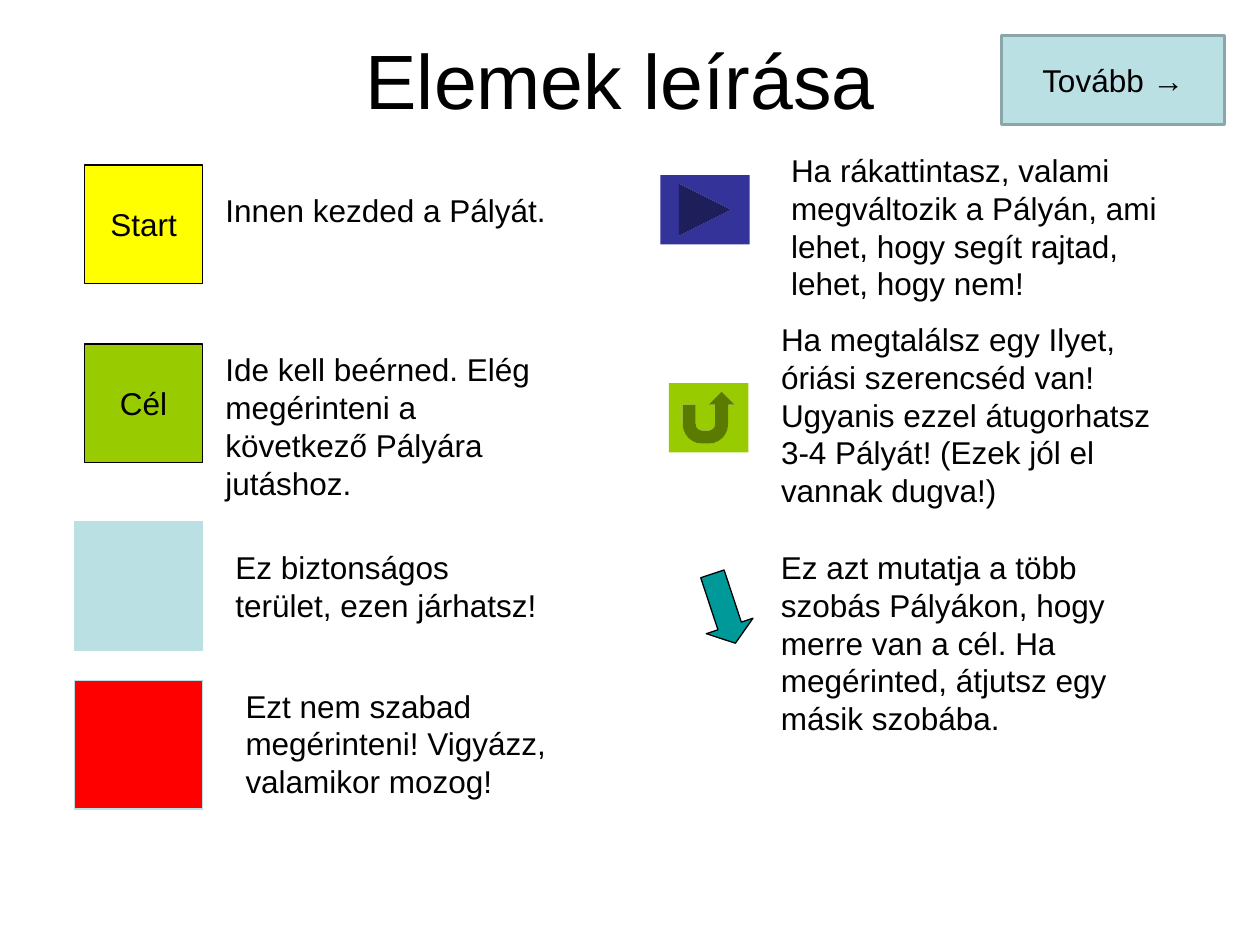
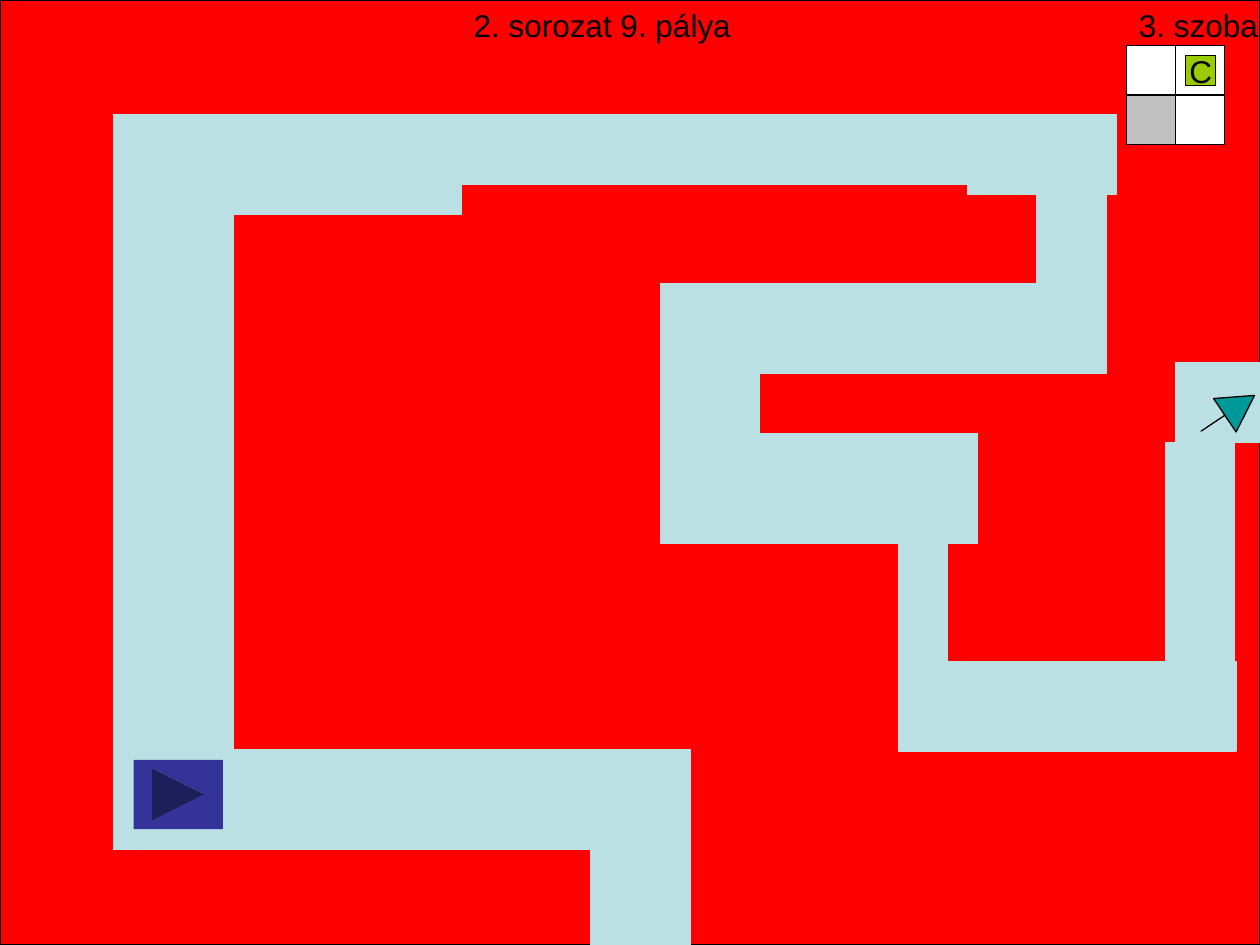
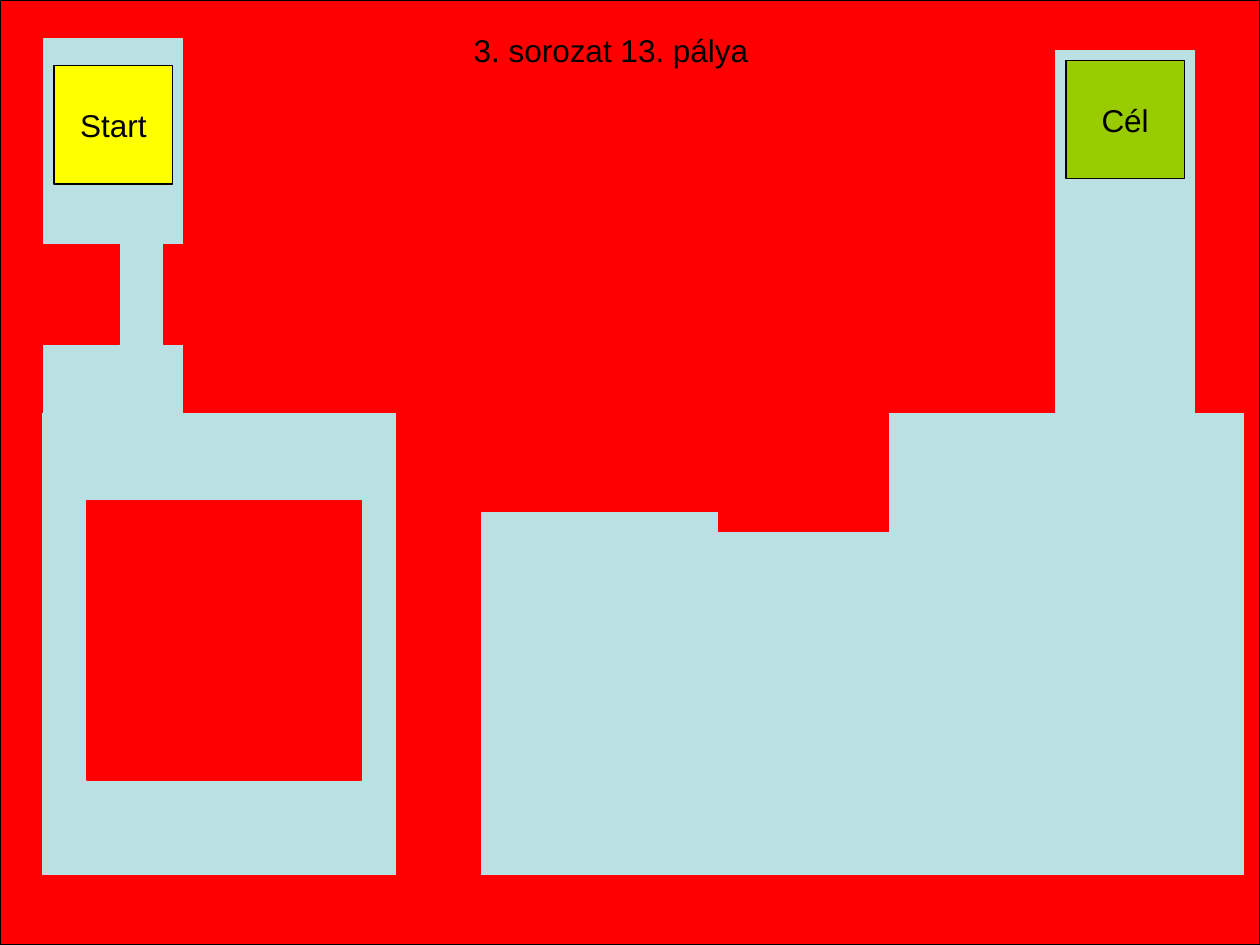
from pptx import Presentation
from pptx import util as u
from pptx.dml.color import RGBColor
from pptx.enum import shapes, text

SHAPE = shapes.MSO_SHAPE
W, H = 10, 7.5

# Theme: colours, type sizes and line widths
THEME = dict(
    font="Arial", title=44, body=18, thin=0.75, thick=2,
    black="000000", white="FFFFFF", grey="C0C0C0", yellow="FFFF00",
    green="99CC00", path_blue="BBE0E3", edge="8AA6A8", red="FF0000",
    navy="333399", teal="009999",
)
TILE = 0.94      # start and goal tiles
SAMPLE = 1.02    # safe and forbidden samples
CELL = 0.39      # one room on the room map
MAP_AT = (8.94, 0.36)
BUTTON = (0.71, 0.55)

# Content: slide 1
TITLE = "Elemek leírása "
NEXT = ("Tovább →", (7.95, 0.28, 1.77, 0.71))
SAMPLES = [(4.14, "path_blue"), (5.4, "red")]
DESCRIPTIONS = [  # left, top, width, height, wording
    (1.69, 1.47, 2.76, 0.4, "Innen kezded a Pályát."),
    (1.69, 2.73, 2.68, 1.3,
     "Ide kell beérned. Elég megérinteni a következő Pályára jutáshoz."),
    (1.77, 4.3, 2.68, 0.7, "Ez biztonságos terület, ezen járhatsz!"),
    (1.85, 5.4, 2.68, 1, "Ezt nem szabad megérinteni! Vigyázz, valamikor mozog!"),
    (6.18, 1.15, 3.23, 1.3,
     "Ha rákattintasz, valami megváltozik a Pályán, ami lehet, hogy segít "
     "rajtad, lehet, hogy nem!"),
    (6.1, 2.49, 3.31, 1.6,
     "Ha megtalálsz egy Ilyet, óriási szerencséd van! Ugyanis ezzel "
     "átugorhatsz 3-4 Pályát! (Ezek jól el vannak dugva!)"),
    (6.1, 4.3, 3.23, 1.6,
     "Ez azt mutatja a több szobás Pályákon, hogy merre van a cél. Ha "
     "megérinted, átjutsz egy másik szobába."),
]

# Content: slide 2
ROOMS = [("white", "white"), ("grey", "white")]
CORRIDORS = [
    (4.69, 5.95, 0.79, 1.55), (0.9, 5.95, 4.57, 0.79), (0.9, 1.86, 0.95, 4.88),
    (0.9, 0.91, 0.95, 1.18), (0.9, 0.91, 2.76, 0.79), (2.48, 0.91, 5.2, 0.55),
    (7.68, 0.91, 1.18, 0.63), (8.23, 0.91, 0.55, 2.05), (5.24, 2.25, 3.47, 0.71),
    (5.24, 2.33, 0.79, 1.89), (5.24, 3.44, 2.52, 0.87), (7.13, 3.83, 0.39, 2.13),
    (7.13, 5.25, 2.68, 0.71), (9.25, 3.51, 0.55, 2.44), (9.33, 2.88, 0.67, 0.63),
]

# Content: slide 3
FIELDS = [(0.35, 0.31, 1.1, 6.54), (0.34, 3.28, 9.53, 3.66), (8.38, 0.4, 1.1, 6.54)]
WALLS = [
    (0.08, 1.94, 0.87, 0.79), (1.3, 1.94, 0.87, 0.79), (7.13, 2.04, 0.87, 0.79),
    (3.15, 3.28, 3.03, 0.78), (3.15, 4.06, 0.66, 3.14), (0.69, 3.97, 2.18, 2.22),
    (4.21, 0.91, 0.66, 3.14), (5.7, 2.86, 1.35, 1.36), (5.24, 3.78, 0.21, 0.28),
    (7.56, 2.9, 0.21, 0.28),
]


def color(name):
    return RGBColor.from_string(THEME[name])


def inches(box):
    return [u.Inches(v) for v in box]


def apply(obj, **values):
    for name, value in values.items():
        setattr(obj, name, value)


def write(sp, words, size="body", align=text.PP_ALIGN.LEFT, **frame):
    tf = sp.text_frame
    apply(tf, **frame)
    p = tf.paragraphs[0]
    p.alignment = align
    r = p.add_run()
    r.text = words
    apply(r.font, name=THEME["font"], size=u.Pt(THEME[size]))
    r.font.color.rgb = color("black")


def label(s, box, words):
    write(s.shapes.add_textbox(*inches(box)), words, word_wrap=True,
          auto_size=text.MSO_AUTO_SIZE.SHAPE_TO_FIT_TEXT)


def shape(s, box, fill, line="black", kind=SHAPE.RECTANGLE, width="thin",
          words=None, wrap=False, rotation=0, adjust=()):
    sp = s.shapes.add_shape(kind, *inches(box))
    sp.shadow.inherit = False
    sp.rotation = rotation
    for i, value in enumerate(adjust):
        sp.adjustments[i] = value
    sp.fill.solid()
    sp.fill.fore_color.rgb = color(fill)
    if line:
        sp.line.color.rgb = color(line)
        sp.line.width = u.Pt(THEME[width])
    else:
        sp.line.fill.background()
    if words:
        write(sp, words, align=text.PP_ALIGN.CENTER, word_wrap=wrap,
              vertical_anchor=text.MSO_ANCHOR.MIDDLE)
    return sp


def start(s, x, y):
    shape(s, (x, y, TILE, TILE), "yellow", words="Start")


def goal(s, x, y):
    shape(s, (x, y, TILE, TILE), "green", words="Cél")


def forward_button(s, x, y):
    shape(s, (x, y, *BUTTON), "navy", None, SHAPE.ACTION_BUTTON_FORWARD_OR_NEXT)


def blocks(s, boxes, fill):
    for box in boxes:
        shape(s, box, fill, fill)


def level(prs):
    s = prs.slides.add_slide(prs.slide_layouts[6])
    shape(s, (0, 0, W, H), "red")
    return s


def level_name(s, y, words):
    label(s, (3.66, y, 3.15, 0.4), words)


def legend_slide(prs):
    s = prs.slides.add_slide(prs.slide_layouts[5])
    title = s.shapes.title
    apply(title, **dict(zip(("left", "top", "width", "height"),
                            inches((0.51, 0, 9, 1.25)))))
    write(title, TITLE, "title", text.PP_ALIGN.CENTER,
          vertical_anchor=text.MSO_ANCHOR.MIDDLE)
    # Symbols
    start(s, 0.67, 1.31)
    goal(s, 0.67, 2.73)
    for y, fill in SAMPLES:
        shape(s, (0.59, y, SAMPLE, SAMPLE), fill, "path_blue")
    forward_button(s, 5.24, 1.39)
    shape(s, (5.31, 3.04, 0.63, 0.55), "green", None, SHAPE.ACTION_BUTTON_RETURN)
    shape(s, (5.55, 4.54, 0.39, 0.58), "teal", kind=SHAPE.UP_ARROW,
          rotation=161.7, adjust=(0.5, 0.371))
    # Explanations
    for *box, words in DESCRIPTIONS:
        label(s, box, words)
    words, box = NEXT
    shape(s, box, "path_blue", "edge", width="thick", words=words, wrap=True)


def room_slide(prs):
    s = level(prs)
    # Room map
    x, y = MAP_AT
    for row, fills in enumerate(ROOMS):
        for col, fill in enumerate(fills):
            shape(s, (x + col * CELL, y + row * (CELL + 0.01), CELL, CELL), fill)
    label(s, (x, 0, 1.34, 0.4), "3. szoba")
    # Course
    blocks(s, CORRIDORS, "path_blue")
    forward_button(s, 1.06, 6.03)
    shape(s, (9.49, 3.12, 0.51, 0.32), "teal", kind=SHAPE.RIGHT_ARROW,
          rotation=326.2, adjust=(0, 0.885))
    shape(s, (x + CELL + 0.08, y + 0.08, 0.24, 0.24), "green", words="C")
    level_name(s, 0, "2. sorozat 9. pálya")


def course_slide(prs):
    s = level(prs)
    blocks(s, FIELDS, "path_blue")
    blocks(s, WALLS, "red")
    start(s, 0.43, 0.52)
    goal(s, 8.46, 0.48)
    level_name(s, 0.2, "3. sorozat 13. pálya")


def main():
    prs = Presentation()
    apply(prs, slide_width=u.Inches(W), slide_height=u.Inches(H))
    for build in (legend_slide, room_slide, course_slide):
        build(prs)
    prs.save("out.pptx")


if __name__ == "__main__":
    main()
